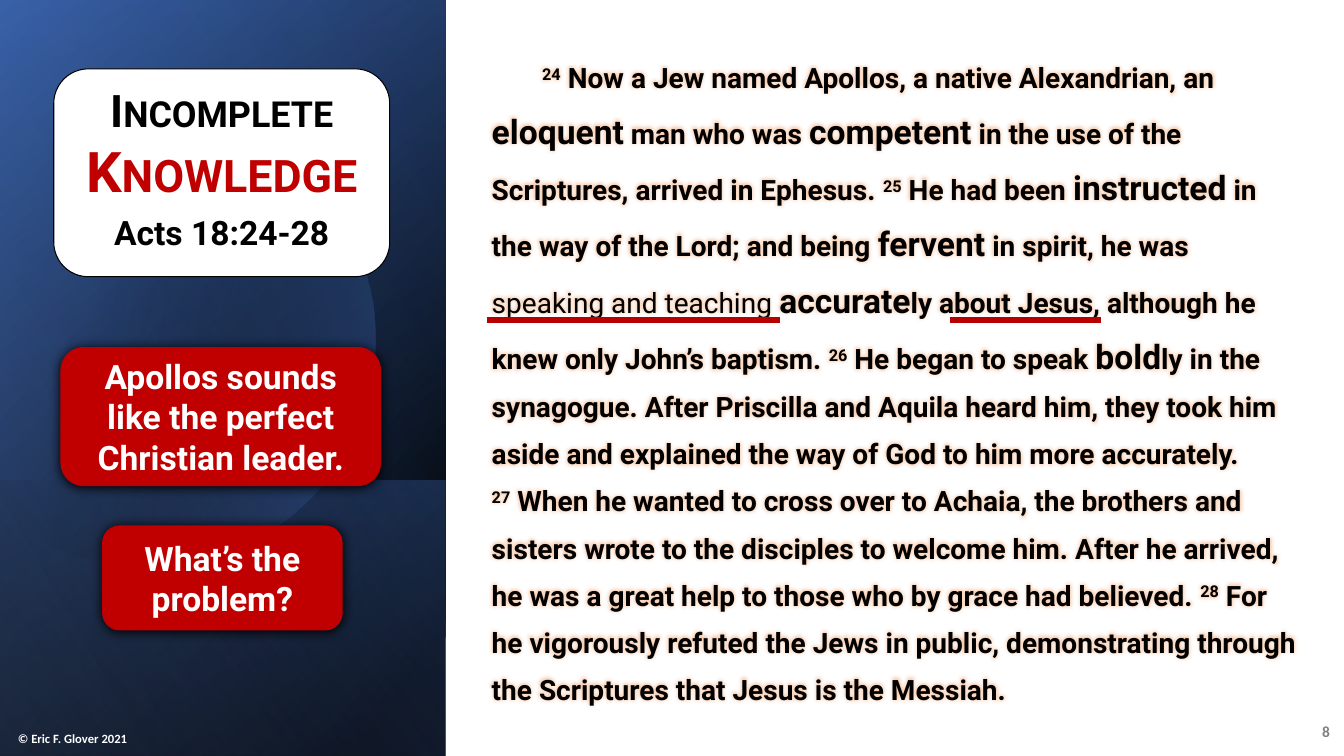
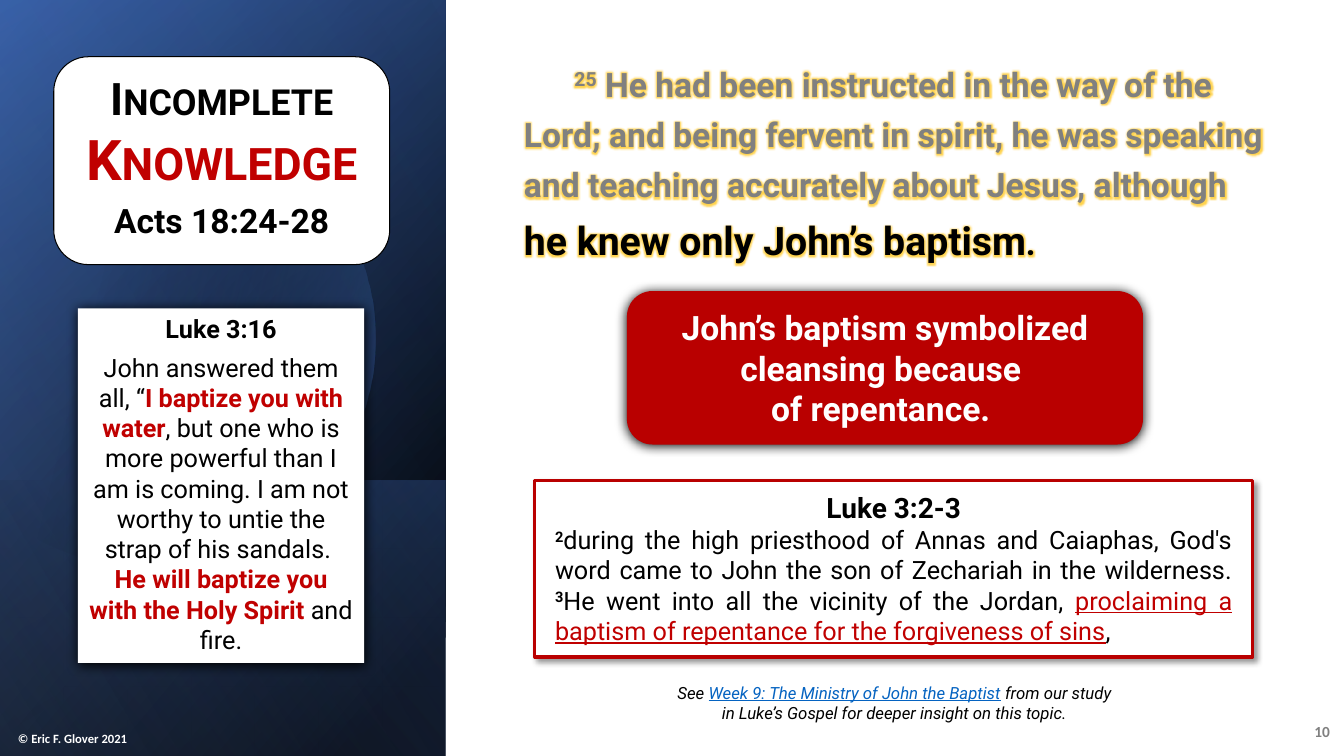
from math import cos, radians, sin

from lxml import etree
from pptx import Presentation
from pptx.dml.color import RGBColor
from pptx.enum.shapes import MSO_CONNECTOR, MSO_SHAPE
from pptx.enum.text import MSO_ANCHOR as ANCHOR, PP_ALIGN as ALIGN
from pptx.oxml.ns import qn
from pptx.util import Inches, Pt

BLACK = RGBColor(0x00, 0x00, 0x00)
WHITE = RGBColor(0xFF, 0xFF, 0xFF)
GRAY = RGBColor(0x80, 0x80, 0x80)
RED = RGBColor(0xC0, 0x00, 0x00)
DEEP_RED = RGBColor(0xB9, 0x00, 0x00)
LINK_BLUE = RGBColor(0x05, 0x63, 0xC1)
BLUE = RGBColor(0x44, 0x72, 0xC4)
DARK_BLUE = RGBColor(0x2F, 0x55, 0x97)
LIGHT_BLUE = RGBColor(0x8F, 0xAA, 0xDC)
ORANGE = RGBColor(0xED, 0x7D, 0x31)
GOLD = RGBColor(0xFF, 0xC0, 0x00)

# Shadows: opacity %, blur pt, distance pt, angle
SOFT_SHADOW = (100, 8.5, 1, 90)
CORNER_SHADOW = (40, 4, 3, 45)

deck = Presentation()
deck.slide_width, deck.slide_height = Inches(13.333), Inches(7.5)
COLUMN, ROW = deck.slide_width / 100, deck.slide_height / 100


def add_box(page, area, kind=MSO_SHAPE.RECTANGLE, fill=None, line=None,
            line_width=0.75, shadow=None):
    """Add a shape; area is left, top, width, height in percent of the slide."""
    left, top, width, height = area
    box = page.shapes.add_shape(kind, int(left * COLUMN), int(top * ROW),
                                int(width * COLUMN), int(height * ROW))
    box.shadow.inherit = False
    if fill is None:
        box.fill.background()
    else:
        box.fill.solid()
        box.fill.fore_color.rgb = fill
    if line is None:
        box.line.fill.background()
    else:
        box.line.color.rgb = line
        box.line.width = Pt(line_width)
    if shadow:
        opacity, blur, distance, angle = shadow
        effects = box._element.spPr.find(qn("a:effectLst"))
        outer = etree.SubElement(effects, qn("a:outerShdw"), blurRad=str(Pt(blur)),
                                 dist=str(Pt(distance)), dir=str(angle * 60000),
                                 algn="ctr", rotWithShape="0")
        color = etree.SubElement(outer, qn("a:srgbClr"), val=str(BLACK))
        etree.SubElement(color, qn("a:alpha"), val=str(opacity * 1000))
    return box


def write(box, *paragraphs, anchor=ANCHOR.TOP, align=ALIGN.CENTER, insets=(0.1, 0.05, 0.1, 0.05),
          indent=0, spacing=None, after=0, glow=None, **base_format):
    """Fill a box with paragraphs, each a list of (text, format changes); ~ is a hard space."""
    frame = box.text_frame
    frame.word_wrap = True
    frame.vertical_anchor = anchor
    (frame.margin_left, frame.margin_top,
     frame.margin_right, frame.margin_bottom) = map(Inches, insets)
    for index, (spans, changes) in enumerate(paragraphs):
        para = frame.paragraphs[0] if index == 0 else frame.add_paragraph()
        layout = dict(align=align, after=after) | changes
        para.alignment = layout["align"]
        para.space_after = Pt(layout["after"])
        if spacing:
            para.line_spacing = spacing
        if indent:
            para._p.get_or_add_pPr().set("indent", str(Inches(indent)))
        for text, span_format in spans:
            style = dict(size=24, font="Roboto", color=BLACK) | base_format | span_format
            for part, piece in enumerate(text.replace("~", chr(160)).split("\n")):
                if part:
                    para.add_line_break()
                if not piece:
                    continue
                span = para.add_run()
                span.text = piece
                span.font.size = Pt(style["size"])
                span.font.name = style["font"]
                span.font.color.rgb = style["color"]
                span.font.bold = style.get("bold", False)
                span.font.italic = style.get("italic", False)
                span.font.underline = style.get("underline", False)
                properties = span._r.get_or_add_rPr()
                if "raised" in style:
                    properties.set("baseline", "30000")
                if "caps" in style:
                    properties.set("cap", "small")
                if glow:
                    color, opacity = glow
                    effects = etree.Element(qn("a:effectLst"))
                    halo = etree.SubElement(effects, qn("a:glow"), rad=str(Pt(5)))
                    tint = etree.SubElement(halo, qn("a:srgbClr"), val=str(color))
                    etree.SubElement(tint, qn("a:alpha"), val=str(opacity * 1000))
                    properties.find(qn("a:solidFill")).addnext(effects)


PLAIN = {}
VERSE = dict(raised=True)
BIG = dict(size=24)
LIGHT = dict(bold=False)
RED_BOLD = dict(color=RED, bold=True)
ROUNDED = MSO_SHAPE.ROUNDED_RECTANGLE

PANEL = (0, 0, 33.15, 100)
LOWER_PANEL = (0, 63.5, 33.15, 36.5)
DISC = None
# Panel layers: area, angle, then stops of position %, colour, opacity %
LAYERS = [
    (PANEL, 220, [(8, BLACK, 100), (100, DARK_BLUE, 100)]),
    (PANEL, 240, [(0, BLACK, 0), (99, BLUE, 46)]),
    (LOWER_PANEL, 140, [(2, BLUE, 29), (100, BLACK, 30)]),
    (DISC, 14, [(29, BLACK, 0), (100, BLUE, 43)]),
    (PANEL, 150, [(0, BLACK, 0), (99, LIGHT_BLUE, 11)]),
]
RADIUS = Inches(2.26)
CENTER_X, CENTER_Y = Inches(1.46), Inches(3.36)
DISC_EDGE = [(int(CENTER_X + RADIUS * cos(radians(angle))),
              int(CENTER_Y + RADIUS * sin(radians(angle)))) for angle in range(-130, 131, 2)]

pages = []
for number, card_top in (("8", 9.1), ("10", 7.5)):
    page = deck.slides.add_slide(deck.slide_layouts[6])
    pages.append(page)
    for area, angle, stops in LAYERS:
        if area is DISC:
            outline = page.shapes.build_freeform(*DISC_EDGE[0])
            outline.add_line_segments(DISC_EDGE[1:])
            layer = outline.convert_to_shape()
            layer.shadow.inherit = False
            layer.line.fill.background()
        else:
            layer = add_box(page, area)
        layer.fill.gradient()
        gradient = layer._element.spPr.find(qn("a:gradFill"))
        for child in list(gradient):
            gradient.remove(child)
        stop_list = etree.SubElement(gradient, qn("a:gsLst"))
        for position, color, opacity in stops:
            stop = etree.SubElement(stop_list, qn("a:gs"), pos=str(position * 1000))
            tint = etree.SubElement(stop, qn("a:srgbClr"), val=str(color))
            etree.SubElement(tint, qn("a:alpha"), val=str(opacity * 1000))
        etree.SubElement(gradient, qn("a:lin"), ang=str(angle * 60000), scaled="0")

    write(add_box(page, (96, 94.1, 3.7, 5.3)), ([(number, PLAIN)], PLAIN),
          anchor=ANCHOR.MIDDLE, align=ALIGN.RIGHT, after=6,
          size=11, font="Calibri", color=GRAY, bold=True)
    write(add_box(page, (0.6, 95.6, 11.8, 3.7)), ([("© Eric F. Glover 2021", PLAIN)], PLAIN),
          anchor=ANCHOR.BOTTOM, align=ALIGN.LEFT,
          size=9, font="Calibri", color=WHITE, bold=True)
    write(add_box(page, (4, card_top, 25, 27.5), ROUNDED, WHITE, BLACK),
          ([("Incomplete\n", dict(size=32, caps=True)),
            ("Knowledge", dict(size=40, caps=True, color=RED))], PLAIN),
          ([("Acts 18:24-28", PLAIN)], PLAIN),
          anchor=ANCHOR.MIDDLE, insets=(0, 0, 0, 0.1), after=6, bold=True)

apollos_page, baptism_page = pages

write(add_box(apollos_page, (35.85, 5.6, 61.9, 88.5)), ([
    ("24", VERSE),
    ("~Now a Jew named Apollos, a native Alexandrian, an ", PLAIN),
    ("eloquent", BIG),
    (" man who was ", PLAIN),
    ("competent", BIG),
    (" in the use of the Scriptures, arrived in Ephesus. ", PLAIN),
    ("25", VERSE),
    ("~He had been ", PLAIN),
    ("instructed", BIG),
    (" in the way of the Lord; and being ", PLAIN),
    ("fervent", BIG),
    (" in spirit, he was ", PLAIN),
    ("speaking and teaching ", LIGHT),
    ("accurate", BIG),
    ("ly about Jesus, although he knew only John’s baptism. ", PLAIN),
    ("26", VERSE),
    ("~He began to speak ", PLAIN),
    ("bold", BIG),
    ("ly in the synagogue. After Priscilla and Aquila heard him, they took him aside and "
     "explained the way of God to him more accurately. ", PLAIN),
    ("27", VERSE),
    ("~When he wanted to cross over to Achaia, the brothers and sisters wrote to the disciples "
     "to welcome him. After he arrived, he was a great help to those who by grace had "
     "believed. ", PLAIN),
    ("28", VERSE),
    ("~For he vigorously refuted the Jews in public, demonstrating through the Scriptures "
     "that Jesus is the Messiah.", PLAIN),
], PLAIN), align=ALIGN.LEFT, indent=0.5, spacing=1.4, after=12, glow=(ORANGE, 40),
    size=20, bold=True)

for page, area, fill, text in (
    (apollos_page, (4.5, 45.9, 23.85, 18.4), RED,
     "Apollos sounds like the perfect Christian leader."),
    (apollos_page, (7.6, 69.5, 17.9, 13.9), RED, "What’s the problem?"),
    (baptism_page, (46.65, 38.5, 38.4, 20.3), DEEP_RED,
     "John’s baptism symbolized cleansing because \nof repentance. "),
):
    write(add_box(page, area, ROUNDED, fill, shadow=SOFT_SHADOW), ([(text, PLAIN)], PLAIN),
          anchor=ANCHOR.MIDDLE, color=WHITE, bold=True)

for start, end in ((36.2, 58), (70.65, 81.9)):
    height = int(42.3 * ROW)
    underline = apollos_page.shapes.add_connector(
        MSO_CONNECTOR.STRAIGHT, int(start * COLUMN), height, int(end * COLUMN), height)
    underline.line.color.rgb = DEEP_RED
    underline.line.width = Pt(4.5)
    etree.SubElement(underline._element.spPr, qn("a:effectLst"))

write(add_box(baptism_page, (38.25, 6.4, 56.6, 28.7)), ([
    ("25", VERSE),
    ("~He had been instructed in the way of the Lord; and being fervent in spirit, he was "
     "speaking and teaching accurately about Jesus, although ", PLAIN),
    ("he knew only John’s baptism", dict(size=28, color=BLACK)),
    (".", dict(color=BLACK)),
], PLAIN), align=ALIGN.LEFT, indent=0.5, spacing=1.25, after=12, glow=(GOLD, 70),
    color=GRAY, bold=True)

write(add_box(baptism_page, (5.8, 40.8, 21.3, 46.9), fill=WHITE, shadow=SOFT_SHADOW),
      ([("Luke 3:16", dict(bold=True))], dict(after=6)),
      ([("John answered them all,~“", PLAIN),
        ("I baptize you with water", RED_BOLD),
        (", but one who is more powerful than I am is coming. I am not worthy to untie the "
         "strap of his sandals. \n", PLAIN),
        ("He will baptize you with~the Holy Spirit", RED_BOLD),
        (" and fire.", PLAIN)], PLAIN),
      size=18)

write(add_box(baptism_page, (39.8, 63.6, 53.4, 23.3), fill=WHITE, line=DEEP_RED,
              line_width=2.25, shadow=CORNER_SHADOW),
      ([("Luke 3:2-3", dict(size=20, bold=True))], PLAIN),
      ([("2", VERSE | dict(bold=True)),
        ("during the high priesthood of Annas and Caiaphas, God's word came to John the son of "
         "Zechariah in the wilderness. ", PLAIN),
        ("3", VERSE | dict(bold=True)),
        ("He went into all the vicinity of the Jordan, ", PLAIN),
        ("proclaiming a baptism of repentance for the forgiveness of sins",
         dict(color=RED, underline=True)),
        (",", PLAIN)], dict(align=ALIGN.JUSTIFY)),
      insets=(0.2, 0.1, 0.2, 0.1), size=18)

write(add_box(baptism_page, (49.2, 89.6, 34.7, 6.7)), ([
    ("See ", PLAIN),
    ("Week 9: The Ministry of John the Baptist", dict(color=LINK_BLUE, underline=True)),
    (" from our study in Luke’s Gospel for deeper insight on this topic.", PLAIN),
], PLAIN), size=12, italic=True)

deck.save("out.pptx")
